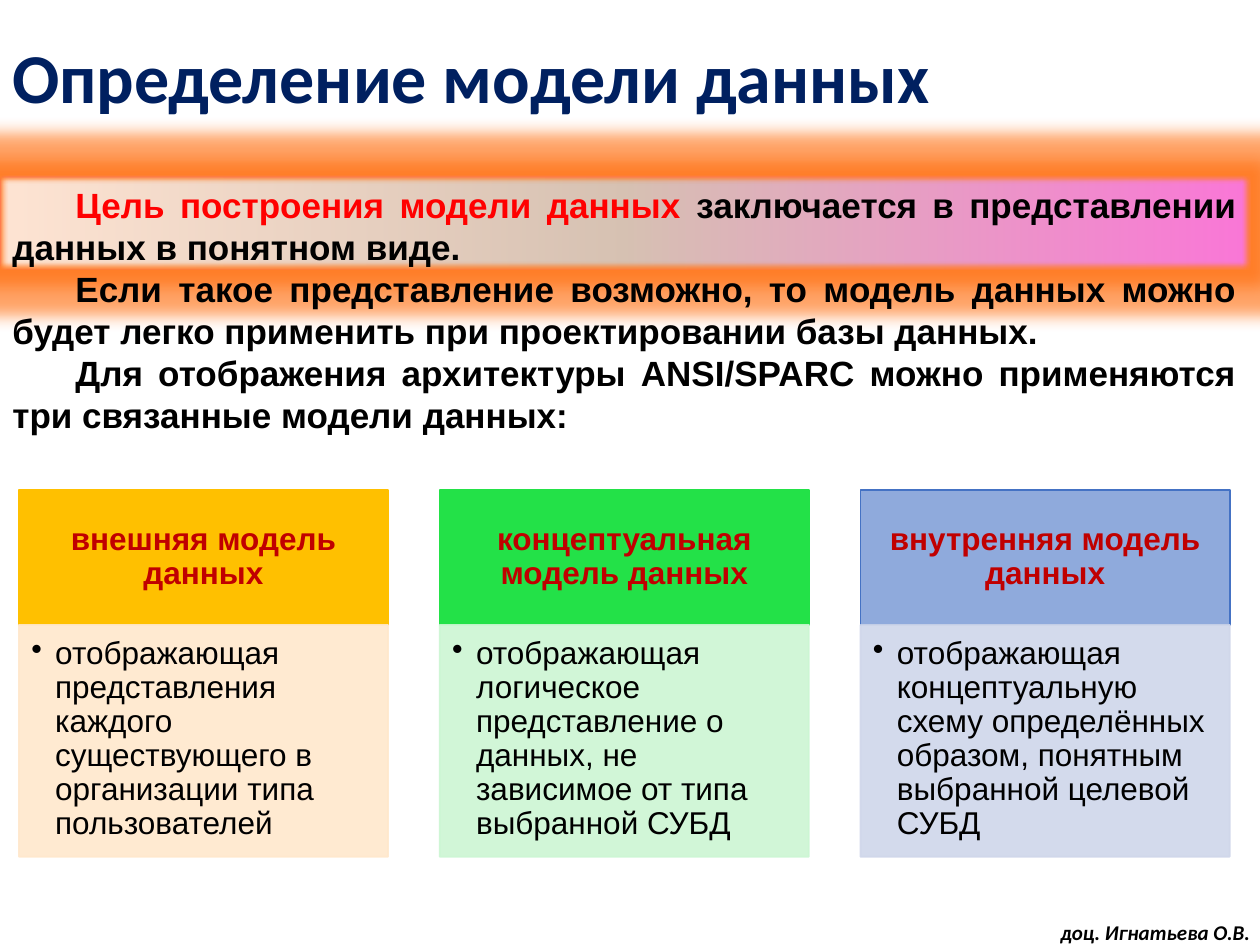
"""Builds the slide that defines a data model and its three related kinds."""
from dataclasses import dataclass

from lxml import etree
from pptx import Presentation
from pptx import util as u
from pptx.dml.color import RGBColor
from pptx.enum import shapes, text
from pptx.oxml.ns import nsdecls, qn
from pptx.oxml import parse_xml

WIDTH, HEIGHT = 10, 7.5


@dataclass(frozen=True)
class Theme:
    """Colours, fonts and type sizes of the slide."""
    navy: str = "002060"
    red: str = "FF0000"
    dark_red: str = "C00000"
    black: str = "000000"
    glow: str = "FF6600"
    band: tuple = ("FA76D7", "D6C1B2", "FEE4D3")
    head_font: str = "Calibri"
    body_font: str = "Arial"
    title_size: int = 40
    body_size: int = 20
    card_size: int = 18
    footer_size: int = 12


THEME = Theme()

GOAL = [
    [("Цель построения модели данных ", THEME.red),
     ("заключается в представлении данных в понятном виде.", THEME.black)],
    [("Если такое представление возможно, то модель данных можно будет легко "
      "применить при проектировании базы данных.", THEME.black)],
    [("Для отображения архитектуры ANSI/SPARC можно применяются три связанные "
      "модели данных:", THEME.black)],
]

MODELS = [
    ("внешняя модель данных",
     "отображающая представления каждого существующего в организации типа "
     "пользователей", "FFC000", "FFC000", "FFE8CC"),
    ("концептуальная модель данных",
     "отображающая логическое представление о данных, не зависимое от типа "
     "выбранной СУБД", "23E148", "23E148", "CCF6D3"),
    ("внутренняя модель данных",
     "отображающая концептуальную схему определённых образом, понятным "
     "выбранной целевой СУБД", "8FAADC", "4472C4", "CFD6EA"),
]


def apply(target, values):
    """Set every attribute named in a dict of format values."""
    for name, value in values.items():
        setattr(target, name, value)


def inches(box):
    """Turn a box of numbers into lengths."""
    return [u.Inches(side) for side in box]


def add_run(paragraph, words, colour, size, font, **style):
    """Append one styled run to a paragraph."""
    run = paragraph.add_run()
    run.text = words
    apply(run.font, {"size": u.Pt(size), "name": font, **style})
    run.font.color.rgb = RGBColor.from_string(colour)


def set_indent(paragraph, left, first, bullet=None):
    """Give a paragraph its left margin, first-line indent and bullet."""
    properties = paragraph._p.get_or_add_pPr()
    properties.set("marL", str(u.Inches(left)))
    properties.set("indent", str(u.Inches(first)))
    if bullet:
        etree.SubElement(properties, qn("a:buChar")).set("char", bullet)


def set_frame(shape, insets=(0.1, 0.05, 0.1, 0.05), **values):
    """Set wrapping, insets and anchor, and return the first paragraph."""
    sides = ("margin_left", "margin_top", "margin_right", "margin_bottom")
    frame = shape.text_frame
    apply(frame, {"word_wrap": True, **dict(zip(sides, inches(insets))), **values})
    return frame.paragraphs[0]


def add_text(slide, box, **values):
    """Add a text box and return its first paragraph."""
    return set_frame(slide.shapes.add_textbox(*inches(box)), **values)


def add_panel(slide, box, fill, line):
    """Add a flat rectangle with a thin outline."""
    panel = slide.shapes.add_shape(shapes.MSO_SHAPE.RECTANGLE, *inches(box))
    panel.shadow.inherit = False
    panel.fill.solid()
    panel.fill.fore_color.rgb = RGBColor.from_string(fill)
    panel.line.color.rgb = RGBColor.from_string(line)
    panel.line.width = u.Pt(1)
    return panel


def add_band(slide, box):
    """Add the gradient band with its glow and soft edge."""
    band = add_panel(slide, box, THEME.band[0], THEME.band[0])
    stops = "".join(
        f'<a:gs pos="{index * 50000}"><a:srgbClr val="{colour}"/></a:gs>'
        for index, colour in enumerate(THEME.band))
    gradient = parse_xml(
        f'<a:gradFill {nsdecls("a")} rotWithShape="1"><a:gsLst>{stops}</a:gsLst>'
        '<a:lin ang="10800000" scaled="0"/></a:gradFill>')
    effects = parse_xml(
        f'<a:effectLst {nsdecls("a")}><a:glow rad="228600">'
        f'<a:srgbClr val="{THEME.glow}"><a:alpha val="60000"/></a:srgbClr></a:glow>'
        '<a:softEdge rad="31750"/></a:effectLst>')
    properties = band._element.spPr
    for tag, element in (("a:solidFill", gradient), ("a:effectLst", effects)):
        properties.replace(properties.find(qn(tag)), element)


def add_goal(slide, box):
    """Add the justified paragraphs on the purpose of the model."""
    paragraph = add_text(slide, box)
    frame = paragraph._parent
    for index, parts in enumerate(GOAL):
        if index:
            paragraph = frame.add_paragraph()
        set_indent(paragraph, 0, 0.5)
        paragraph.alignment = text.PP_ALIGN.JUSTIFY
        for words, colour in parts:
            add_run(paragraph, words, colour, THEME.body_size, THEME.body_font, bold=True)


def add_model(slide, column, model):
    """Add one column: the model's heading and its description."""
    name, meaning, fill, line, tint = model
    left, top, width, head, body = 0.15 + column * 3.34, 3.89, 2.93, 1.07, 1.84

    heading = add_panel(slide, (left, top, width, head), fill, line)
    paragraph = set_frame(heading, (0.14, 0.08, 0.14, 0.08),
                          vertical_anchor=text.MSO_ANCHOR.MIDDLE)
    apply(paragraph, {"alignment": text.PP_ALIGN.CENTER, "line_spacing": 0.9})
    add_run(paragraph, name, THEME.dark_red, THEME.card_size, THEME.body_font, bold=True)

    description = add_panel(slide, (left, top + head, width, body), tint, tint)
    for colour in description._element.spPr.iter(qn("a:srgbClr")):
        etree.SubElement(colour, qn("a:alpha")).set("val", "90000")
    paragraph = set_frame(description, (0.1, 0.1, 0.14, 0.16),
                          vertical_anchor=text.MSO_ANCHOR.TOP)
    set_indent(paragraph, 0.19, -0.19, "•")
    apply(paragraph, {"alignment": text.PP_ALIGN.LEFT, "line_spacing": 0.9})
    add_run(paragraph, meaning, THEME.black, THEME.card_size, THEME.body_font)


def main():
    """Build and save the slide."""
    deck = Presentation()
    apply(deck, {"slide_width": u.Inches(WIDTH), "slide_height": u.Inches(HEIGHT)})
    slide = deck.slides.add_slide(deck.slide_layouts[6])

    add_band(slide, (0, 1.4, 9.91, 0.73))
    add_goal(slide, (0, 1.41, 9.91, 2.2))

    footer = add_text(slide, (8.32, 7.25, 1.73, 0.3), word_wrap=False)
    add_run(footer, "доц. Игнатьева О.В.", THEME.black, THEME.footer_size,
            THEME.head_font, bold=True, italic=True)

    title = add_text(slide, (0, 0.11, WIDTH, 1.07),
                     vertical_anchor=text.MSO_ANCHOR.MIDDLE)
    title.line_spacing = 0.9
    add_run(title, "Определение модели данных", THEME.navy, THEME.title_size,
            THEME.head_font, bold=True)

    for column, model in enumerate(MODELS):
        add_model(slide, column, model)
    deck.save("out.pptx")


if __name__ == "__main__":
    main()
